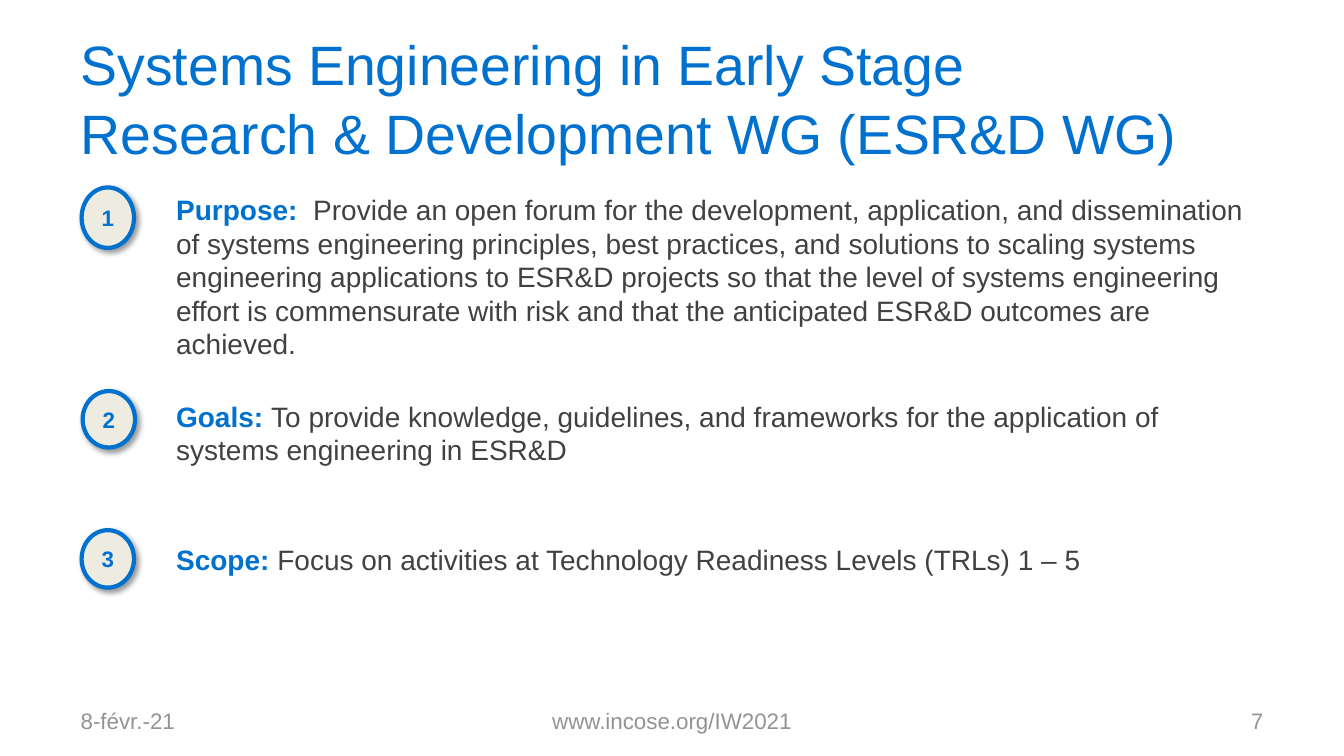
from dataclasses import dataclass

from lxml.etree import SubElement
from pptx import Presentation
from pptx.dml.color import RGBColor
from pptx.enum.shapes import MSO_SHAPE
from pptx.enum.text import MSO_ANCHOR, PP_ALIGN
from pptx.oxml.ns import qn
from pptx.slide import Slide
from pptx.text.text import TextFrame
from pptx.util import Emu, Pt

EMU_PER_PX = 9144
COLORS = {
    "blue": "0071CE",
    "body": "414042",
    "footer": "939393",
    "badge": "EEECE1",
    "shadow": "000000",
}
FORMATS = {
    "title": {"name": "Arial", "size": Pt(39.6), "bold": False},
    "footer": {"name": "Arial", "size": Pt(16), "bold": False},
    "badge": {"name": "Arial", "size": Pt(16), "bold": True},
    "label": {"name": "Arial", "size": Pt(20), "bold": True},
    "body": {"name": "Arial", "size": Pt(20), "bold": False},
}
FONT_COLORS = {
    "title": "blue",
    "footer": "footer",
    "badge": "blue",
    "label": "blue",
    "body": "body",
}


@dataclass(frozen=True)
class Box:
    left: int
    top: int
    width: int
    height: int

    def emu(self) -> list[Emu]:
        return [px(value) for value in (self.left, self.top, self.width, self.height)]


@dataclass(frozen=True)
class Caption:
    box: Box
    text: str
    style: str
    align: PP_ALIGN = PP_ALIGN.LEFT
    line_spacing: float = 1.0


@dataclass(frozen=True)
class Topic:
    badge: Box
    box: Box
    label: str
    body: str


CAPTIONS = [
    Caption(
        Box(67, 33, 1201, 125),
        "Systems Engineering in Early Stage \nResearch & Development WG (ESR&D WG)",
        "title",
        line_spacing=1.04,
    ),
    Caption(Box(67, 695, 311, 40), "8-févr.-21", "footer"),
    Caption(Box(456, 695, 422, 40), "www.incose.org/IW2021", "footer", PP_ALIGN.CENTER),
    Caption(Box(956, 695, 311, 40), "7", "footer", PP_ALIGN.RIGHT),
]
TOPICS = [
    Topic(
        Box(81, 186, 52, 60),
        Box(165, 186, 1103, 178),
        "Purpose:  ",
        "Provide an open forum for the development, application, and dissemination "
        "of systems engineering principles, best practices, and solutions to scaling "
        "systems engineering applications to ESR&D projects so that the level of "
        "systems engineering effort is commensurate with risk and that the "
        "anticipated ESR&D outcomes are achieved.",
    ),
    Topic(
        Box(82, 388, 52, 56),
        Box(165, 391, 1090, 77),
        "Goals: ",
        "To provide knowledge, guidelines, and frameworks for the application of "
        "systems engineering in ESR&D",
    ),
    Topic(
        Box(81, 526, 52, 57),
        Box(165, 533, 1136, 44),
        "Scope: ",
        "Focus on activities at Technology Readiness Levels (TRLs) 1 – 5",
    ),
]


def px(value: int) -> Emu:
    return Emu(value * EMU_PER_PX)


def color(name: str) -> RGBColor:
    return RGBColor.from_string(COLORS[name])


def format_run(run, style: str) -> None:
    for attribute, value in FORMATS[style].items():
        setattr(run.font, attribute, value)
    run.font.color.rgb = color(FONT_COLORS[style])


def set_frame(frame: TextFrame, anchor: MSO_ANCHOR, side: int, edge: int) -> None:
    settings = {
        "word_wrap": True,
        "vertical_anchor": anchor,
        "margin_left": px(side),
        "margin_right": px(side),
        "margin_top": px(edge),
        "margin_bottom": px(edge),
    }
    for attribute, value in settings.items():
        setattr(frame, attribute, value)


def add_caption(slide: Slide, caption: Caption) -> None:
    frame = slide.shapes.add_textbox(*caption.box.emu()).text_frame
    set_frame(frame, MSO_ANCHOR.MIDDLE, 13, 7)
    paragraph = frame.paragraphs[0]
    paragraph.text = caption.text
    paragraph.alignment = caption.align
    paragraph.line_spacing = caption.line_spacing
    for run in paragraph.runs:
        format_run(run, caption.style)


def add_badge(slide: Slide, box: Box, number: int) -> None:
    shape = slide.shapes.add_shape(MSO_SHAPE.OVAL, *box.emu())
    shape.fill.solid()
    shape.fill.fore_color.rgb = color("badge")
    shape.line.color.rgb = color("blue")
    shape.line.width = Pt(3)
    shape.shadow.inherit = False
    effects = shape._element.spPr.find(qn("a:effectLst"))
    shadow = SubElement(
        effects,
        qn("a:outerShdw"),
        blurRad=str(Pt(4)),
        dist=str(Pt(3)),
        dir=str(45 * 60000),
        rotWithShape="0",
    )
    shade = SubElement(shadow, qn("a:srgbClr"), val=COLORS["shadow"])
    SubElement(shade, qn("a:alpha"), val="40000")
    set_frame(shape.text_frame, MSO_ANCHOR.MIDDLE, 10, 5)
    paragraph = shape.text_frame.paragraphs[0]
    paragraph.alignment = PP_ALIGN.CENTER
    run = paragraph.add_run()
    run.text = str(number)
    format_run(run, "badge")


def add_topic(slide: Slide, topic: Topic, number: int) -> None:
    add_badge(slide, topic.badge, number)
    frame = slide.shapes.add_textbox(*topic.box.emu()).text_frame
    set_frame(frame, MSO_ANCHOR.TOP, 10, 5)
    for text, style in ((topic.label, "label"), (topic.body, "body")):
        run = frame.paragraphs[0].add_run()
        run.text = text
        format_run(run, style)


def main() -> None:
    presentation = Presentation()
    presentation.slide_width = px(1334)
    presentation.slide_height = px(750)
    slide = presentation.slides.add_slide(presentation.slide_layouts[6])
    for caption in CAPTIONS:
        add_caption(slide, caption)
    for number, topic in enumerate(TOPICS, start=1):
        add_topic(slide, topic, number)
    presentation.save("out.pptx")


if __name__ == "__main__":
    main()
